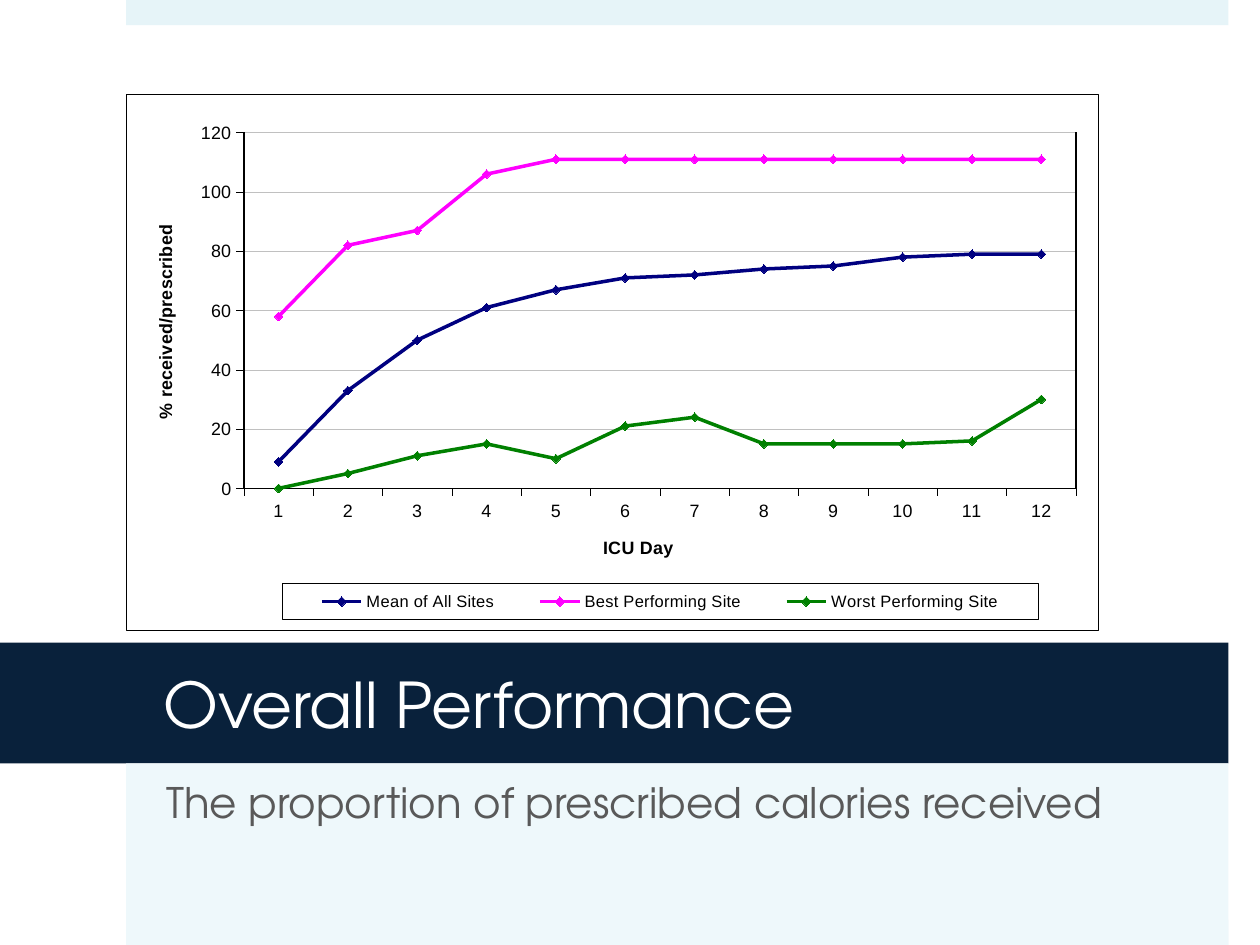
"""Build the slide on overall performance in prescribed calories received."""
from dataclasses import dataclass

from pptx import Presentation
from pptx.chart.data import CategoryChartData
from pptx.dml.color import RGBColor
from pptx.enum.chart import XL_CHART_TYPE, XL_LEGEND_POSITION, XL_MARKER_STYLE, XL_TICK_MARK
from pptx.enum.shapes import MSO_CONNECTOR, MSO_SHAPE
from pptx.enum.text import MSO_ANCHOR, PP_ALIGN
from pptx.oxml import parse_xml
from pptx.oxml.ns import nsdecls
from pptx.util import Pt

RECTANGLE = MSO_SHAPE.RECTANGLE
STRAIGHT = MSO_CONNECTOR.STRAIGHT
LINE_MARKERS = XL_CHART_TYPE.LINE_MARKERS
BOTTOM = XL_LEGEND_POSITION.BOTTOM
DIAMOND = XL_MARKER_STYLE.DIAMOND
OUTSIDE = XL_TICK_MARK.OUTSIDE
LEFT = PP_ALIGN.LEFT
TOP, MIDDLE = MSO_ANCHOR.TOP, MSO_ANCHOR.MIDDLE


@dataclass(frozen=True)
class Theme:
    """Colours, fonts and type sizes."""
    white: str = "FFFFFF"
    black: str = "000000"
    navy: str = "09213B"
    strip: str = "E6F4F8"
    pale: str = "EEF8FB"
    grey: str = "595959"
    grid: str = "C0C0C0"
    mean: str = "000080"
    best: str = "FF00FF"
    worst: str = "008000"
    heading_font: str = "TeX Gyre Adventor"
    chart_font: str = "Arial"
    title_size: float = 36
    subtitle_size: float = 24
    axis_size: float = 10.2
    legend_size: float = 9.4


theme = Theme()


def frame_xml(fill, line):
    """Return chart shape properties with a fill and a thin line."""
    outline = f'<a:solidFill><a:srgbClr val="{line}"/></a:solidFill>' if line else "<a:noFill/>"
    return parse_xml(
        f'<c:spPr {nsdecls("c", "a")}><a:solidFill><a:srgbClr val="{fill}"/></a:solidFill>'
        f'<a:ln w="3175">{outline}</a:ln></c:spPr>')


def layout_xml(left, top, width, height, target=""):
    """Return a manual chart layout in fractions of the chart."""
    return parse_xml(
        f'<c:layout {nsdecls("c")}><c:manualLayout>{target}'
        f'<c:xMode val="edge"/><c:yMode val="edge"/><c:x val="{left}"/><c:y val="{top}"/>'
        f'<c:w val="{width}"/><c:h val="{height}"/></c:manualLayout></c:layout>')


deck = Presentation()
deck.slide_width, deck.slide_height = Pt(720), Pt(540)
page = deck.slides.add_slide(deck.slide_layouts[6])

bands = [
    (72, 0, 630, 14.4, theme.strip, None),
    (72, 525.6, 630, 14.4, theme.pale, None),
    (0, 367.2, 702, 69.12, theme.navy,
     ("Overall Performance", theme.title_size, theme.white, MIDDLE, 93.6, 3.6)),
    (72, 436.32, 630, 103.68, theme.pale,
     ("The proportion of prescribed calories received", theme.subtitle_size, theme.grey, TOP, 23.04, 7.2)),
]
for left, top, width, height, fill, label in bands:
    band = page.shapes.add_shape(RECTANGLE, Pt(left), Pt(top), Pt(width), Pt(height))
    band.shadow.inherit = False
    band.fill.solid()
    band.fill.fore_color.rgb = RGBColor.from_string(fill)
    band.line.fill.background()
    if label:
        text, size, color, anchor, indent, inset = label
        box = band.text_frame
        box.word_wrap = True
        box.vertical_anchor = anchor
        box.margin_left, box.margin_right = Pt(indent), Pt(21.6)
        box.margin_top = box.margin_bottom = Pt(inset)
        para = box.paragraphs[0]
        para.text = text
        para.alignment = LEFT
        para.font.name = theme.heading_font
        para.font.size = Pt(size)
        para.font.color.rgb = RGBColor.from_string(color)

sites = [
    ("Mean of All Sites", theme.mean, [9, 33, 50, 61, 67, 71, 72, 74, 75, 78, 79, 79]),
    ("Best Performing Site", theme.best, [58, 82, 87, 106] + [111] * 8),
    ("Worst Performing Site", theme.worst, [0, 5, 11, 15, 10, 21, 24, 15, 15, 15, 16, 30]),
]
data = CategoryChartData()
data.categories = [str(day) for day in range(1, 13)]
for name, color, values in sites:
    data.add_series(name, values)
chart = page.shapes.add_chart(LINE_MARKERS, Pt(72), Pt(54), Pt(555.84), Pt(306), data).chart
chart.has_title = False
chart.font.name = theme.chart_font
chart.font.size = Pt(theme.axis_size)
chart.font.color.rgb = RGBColor.from_string(theme.black)
chart.plots[0].vary_by_categories = False

for series, (name, color, values) in zip(chart.plots[0].series, sites):
    series.smooth = False
    series.format.line.width = Pt(2)
    series.marker.style = DIAMOND
    series.marker.size = 5
    series.marker.format.fill.solid()
    ink = RGBColor.from_string(color)
    series.format.line.color.rgb = ink
    series.marker.format.fill.fore_color.rgb = ink
    series.marker.format.line.color.rgb = ink

for axis, title in ((chart.category_axis, "ICU Day"), (chart.value_axis, "% received/prescribed")):
    axis.major_tick_mark = OUTSIDE
    axis.format.line.width = Pt(0.25)
    axis.format.line.color.rgb = RGBColor.from_string(theme.black)
    para = axis.axis_title.text_frame.paragraphs[0]
    para.text = title
    para.font.name = theme.chart_font
    para.font.size = Pt(theme.axis_size)
    para.font.bold = True
    para.font.color.rgb = RGBColor.from_string(theme.black)

percent = chart.value_axis
percent.minimum_scale, percent.maximum_scale, percent.major_unit = 0, 120, 20
percent.major_gridlines.format.line.width = Pt(0.25)
percent.major_gridlines.format.line.color.rgb = RGBColor.from_string(theme.grid)
title_body = percent.axis_title._element.xpath(".//a:bodyPr")[0]
title_body.set("rot", "-5400000")
title_body.set("vert", "horz")

chart.has_legend = True
legend = chart.legend
legend.position = BOTTOM
legend.include_in_layout = False
legend.font.name = theme.chart_font
legend.font.size = Pt(theme.legend_size)
legend.font.color.rgb = RGBColor.from_string(theme.black)

space = chart._chartSpace
plot_area = space.xpath("c:chart/c:plotArea")[0]
legend_area = space.xpath("c:chart/c:legend")[0]
for area in (plot_area, legend_area):
    for layout in area.xpath("c:layout"):
        area.remove(layout)
plot_area.insert(0, layout_xml(0.121, 0.071, 0.856, 0.665, '<c:layoutTarget val="inner"/>'))
plot_area.append(frame_xml(theme.white, None))
legend_area.xpath("c:legendPos")[0].addnext(layout_xml(0.16, 0.914, 0.778, 0.067))
legend_area.xpath("c:txPr")[0].addprevious(frame_xml(theme.white, theme.black))
space.xpath("c:chart")[0].addnext(frame_xml(theme.white, theme.black))

for edge_x in (139.3, 614.9):
    edge = page.shapes.add_connector(STRAIGHT, Pt(edge_x), Pt(75.7), Pt(edge_x), Pt(279.2))
    edge.line.width = Pt(1)
    edge.line.color.rgb = RGBColor.from_string(theme.black)
    edge._element.spPr.append(parse_xml(f'<a:effectLst {nsdecls("a")}/>'))

deck.save("out.pptx")
